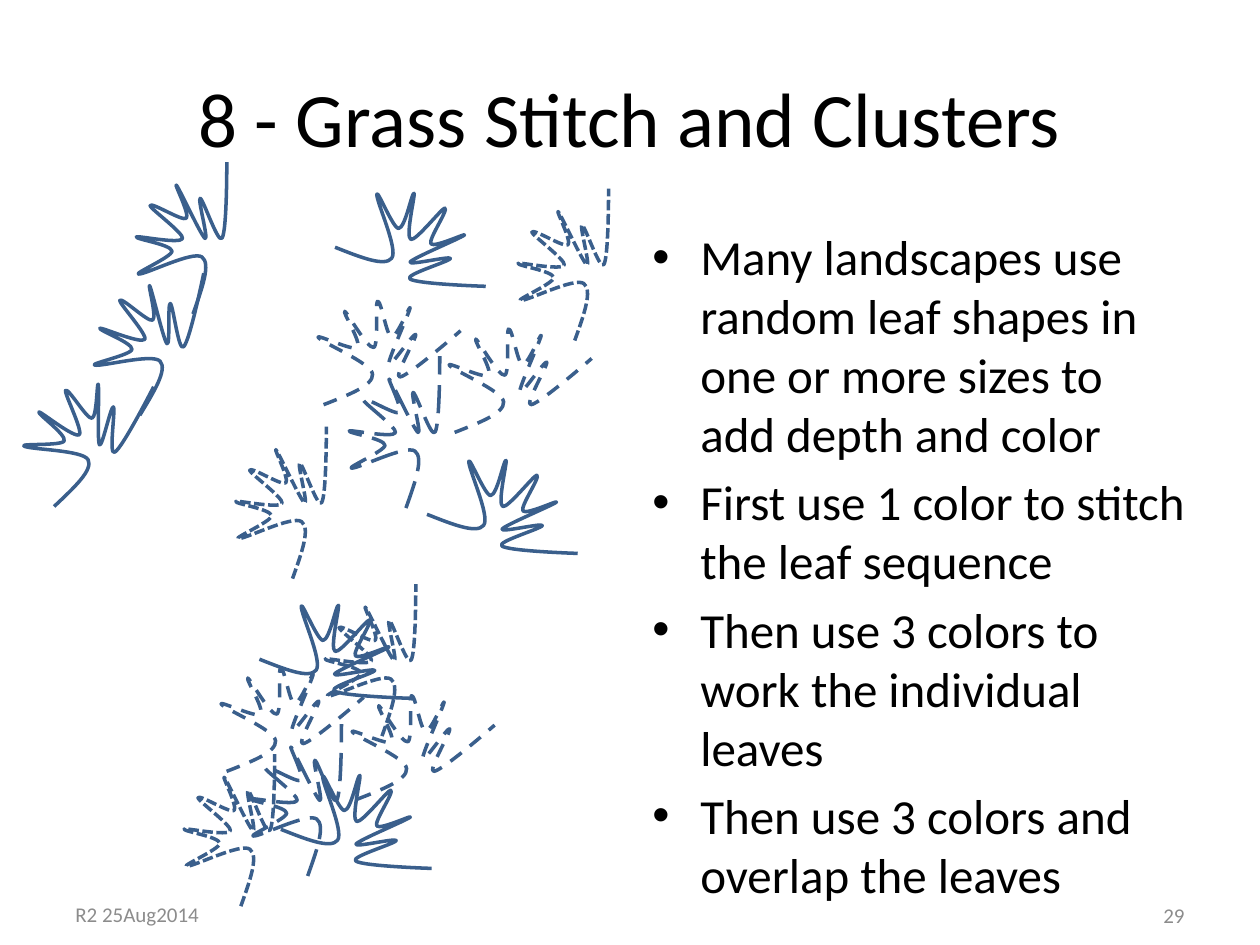
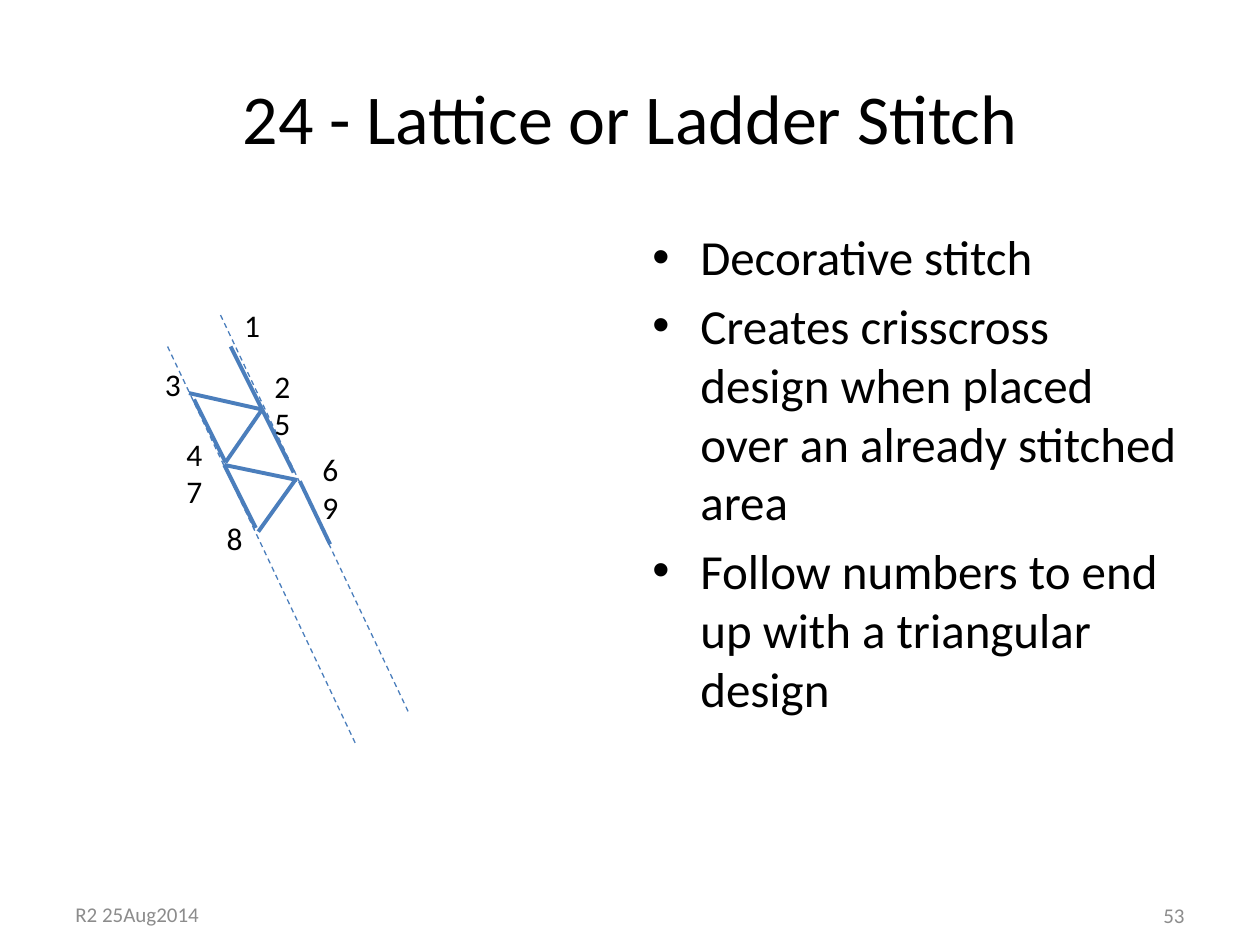
from lxml.etree import SubElement
from pptx import Presentation
from pptx.dml.color import RGBColor
from pptx.enum.dml import MSO_LINE as DASH
from pptx.enum.shapes import MSO_CONNECTOR as LINK
from pptx.enum.text import MSO_ANCHOR as ANCHOR, MSO_AUTO_SIZE as FIT, PP_ALIGN as ALIGN
from pptx.oxml.ns import qn
from pptx.util import Pt

PX = 9144  # EMU per px, 100 px to the inch
BLACK = RGBColor(0, 0, 0)
GREY = RGBColor(0x8C, 0x8C, 0x8C)
LEAF = RGBColor(0x3A, 0x5F, 0x8C)
THREAD = RGBColor(0x4B, 0x7E, 0xBC)
FONT = "Calibri"
DATE = "R2 25Aug2014"

# Leaf outline: a start, then curves of two control points and an end
START = (24, 97)
CURVES = [
    ((40, 82), (55, 68), (51, 60)),
    ((47, 52), (4, 52), (0, 49)),
    ((-3, 47), (30, 49), (32, 45)),
    ((34, 40), (10, 23), (12, 22)),
    ((14, 22), (40, 43), (44, 40)),
    ((47, 37), (32, 7), (33, 5)),
    ((35, 2), (50, 28), (54, 27)),
    ((58, 26), (58, -3), (59, 0)),
    ((60, 4), (58, 45), (60, 48)),
    ((62, 51), (69, 17), (71, 18)),
    ((73, 19), (67, 57), (72, 54)),
    ((78, 51), (103, 2), (103, 2)),
]

# Leaf kinds: turn in degrees and dash
DOTTED = (332.8, DASH.SQUARE_DOT)
DASHED = (21.9, DASH.DASH)
LONG = (332.8, DASH.LONG_DASH)
SOLID = (64.8, None)
MIX = [DOTTED, DASHED, LONG, SOLID, DOTTED, DASHED, SOLID]
CHAIN = [(0, None), (344.5, None), (332.8, None)]

# Lattice, relative to its corner
RAIL = (150, 317)
RAILS = [(12, 37), (54, 12)]
STITCHES = [
    ((62, 37), (87, 87)),
    ((29, 74), (87, 87)),
    ((33, 79), (58, 129)),
    ((58, 129), (87, 87)),
    ((87, 87), (112, 137)),
    ((57, 131), (115, 143)),
    ((57, 131), (82, 181)),
    ((84, 184), (114, 142)),
    ((117, 144), (141, 194)),
]
LABELS = [
    ("1", 63, 0, 33), ("25", 87, 48, 33), ("3", 0, 47, 33),
    ("47", 17, 102, 39), ("69", 125, 114, 33), ("8", 49, 169, 33),
]


def emu(*sizes):
    return [size * PX for size in sizes]


def write(slide, box, lines, size, color=BLACK, align=ALIGN.LEFT,
          anchor=ANCHOR.TOP, wrap=True):
    frame = slide.shapes.add_textbox(*emu(*box)).text_frame
    frame.word_wrap = wrap
    frame.vertical_anchor = anchor
    frame.text = "\n".join(lines)
    for para in frame.paragraphs:
        para.alignment = align
        para.font.name = FONT
        para.font.size = Pt(size)
        para.font.color.rgb = color
    return frame


def add_list(slide, box, lines):
    for para in write(slide, box, lines, 28).paragraphs:
        para.space_before = Pt(5.6)
        props = para._p.get_or_add_pPr()
        props.set("marL", str(38 * PX))
        props.set("indent", str(-38 * PX))
        SubElement(props, qn("a:buFont"), typeface="Arial")
        SubElement(props, qn("a:buChar"), char="•")


def add_page(deck, title, size, page):
    """A slide with its title and footers."""
    slide = deck.slides.add_slide(deck.slide_layouts[6])
    write(slide, (50, 30, 900, 125), [title], size,
          align=ALIGN.CENTER, anchor=ANCHOR.MIDDLE)
    write(slide, (50, 717, 233, 17), [DATE], 12, GREY, anchor=ANCHOR.MIDDLE)
    write(slide, (717, 717, 233, 18), [page], 12, GREY,
          align=ALIGN.RIGHT, anchor=ANCHOR.MIDDLE)
    return slide


def add_leaf(shapes, left, top, turn, dash):
    pen = shapes.build_freeform(*START, scale=PX)
    pen.add_line_segments([curve[-1] for curve in CURVES], close=False)
    leaf = pen.convert_to_shape(*emu(left, top))
    # Bend each straight segment into a curve
    steps = list(leaf._element.iter(qn("a:lnTo")))
    for step, (first, second, _) in zip(steps, CURVES):
        step.tag = qn("a:cubicBezTo")
        for spot, (x, y) in enumerate((first, second)):
            point = step.makeelement(qn("a:pt"), {"x": str(x), "y": str(y)})
            step.insert(spot, point)
    leaf.rotation = turn
    leaf.shadow.inherit = False
    leaf.fill.background()
    leaf.line.color.rgb = LEAF
    leaf.line.width = Pt(2)
    if dash:
        leaf.line.dash_style = dash


def add_cluster(slide, left, top, kinds, spots):
    group = slide.shapes.add_group_shape()
    for (x, y), (turn, dash) in zip(spots, kinds):
        add_leaf(group.shapes, left + x, top + y, turn, dash)


def add_thread(slide, left, top, start, end, width, dash=None):
    line = slide.shapes.add_connector(
        LINK.STRAIGHT,
        *emu(left + start[0], top + start[1], left + end[0], top + end[1]))
    line.line.color.rgb = THREAD
    line.line.width = Pt(width)
    if dash:
        line.line.dash_style = dash
    SubElement(line._element.spPr, qn("a:effectLst"))


def add_lattice(slide, left, top):
    # Guide rails
    for x, y in RAILS:
        add_thread(slide, left, top, (x, y), (x + RAIL[0], y + RAIL[1]),
                   0.75, DASH.DASH)
    # Stitches
    for start, end in STITCHES:
        add_thread(slide, left, top, start, end, 2.25)
    # Stitch order, one digit a line
    for digits, x, y, width in LABELS:
        box = (left + x, top + y, width, 9 + 31 * len(digits))
        frame = write(slide, box, digits, 18, wrap=False)
        frame.auto_size = FIT.SHAPE_TO_FIT_TEXT


def grass_page(deck):
    slide = add_page(deck, "8 - Grass Stitch and Clusters", 44, "29")
    # Chain of leaves, spread cluster, overlapping cluster
    add_cluster(slide, 19, 145, CHAIN, [(0, 160), (54, 82), (85, 0)])
    add_cluster(slide, 183, 152, MIX, [
        (0, 203), (66, 86), (90, 147), (160, 212),
        (224, 14), (170, 108), (87, 0)])
    add_cluster(slide, 142, 479, MIX, [
        (0, 136), (30, 50), (53, 112), (85, 135),
        (112, 1), (134, 72), (68, 0)])
    add_list(slide, (508, 175, 442, 542), [
        "Many landscapes use random leaf shapes in one or more sizes "
        "to add depth and color",
        "First use 1 color to stitch the leaf sequence",
        "Then use 3 colors to work the individual leaves",
        "Then use 3 colors and overlap the leaves",
    ])


def lattice_page(deck):
    slide = add_page(deck, "24 - Lattice or Ladder Stitch", 40, "53")
    add_list(slide, (508, 175, 442, 495), [
        "Decorative stitch",
        "Creates crisscross design when placed over an already stitched area",
        "Follow numbers to end up with a triangular design",
    ])
    add_lattice(slide, 121, 238)


def main():
    deck = Presentation()
    deck.slide_width, deck.slide_height = emu(1000, 750)
    grass_page(deck)
    lattice_page(deck)
    deck.save("out.pptx")


if __name__ == "__main__":
    main()
